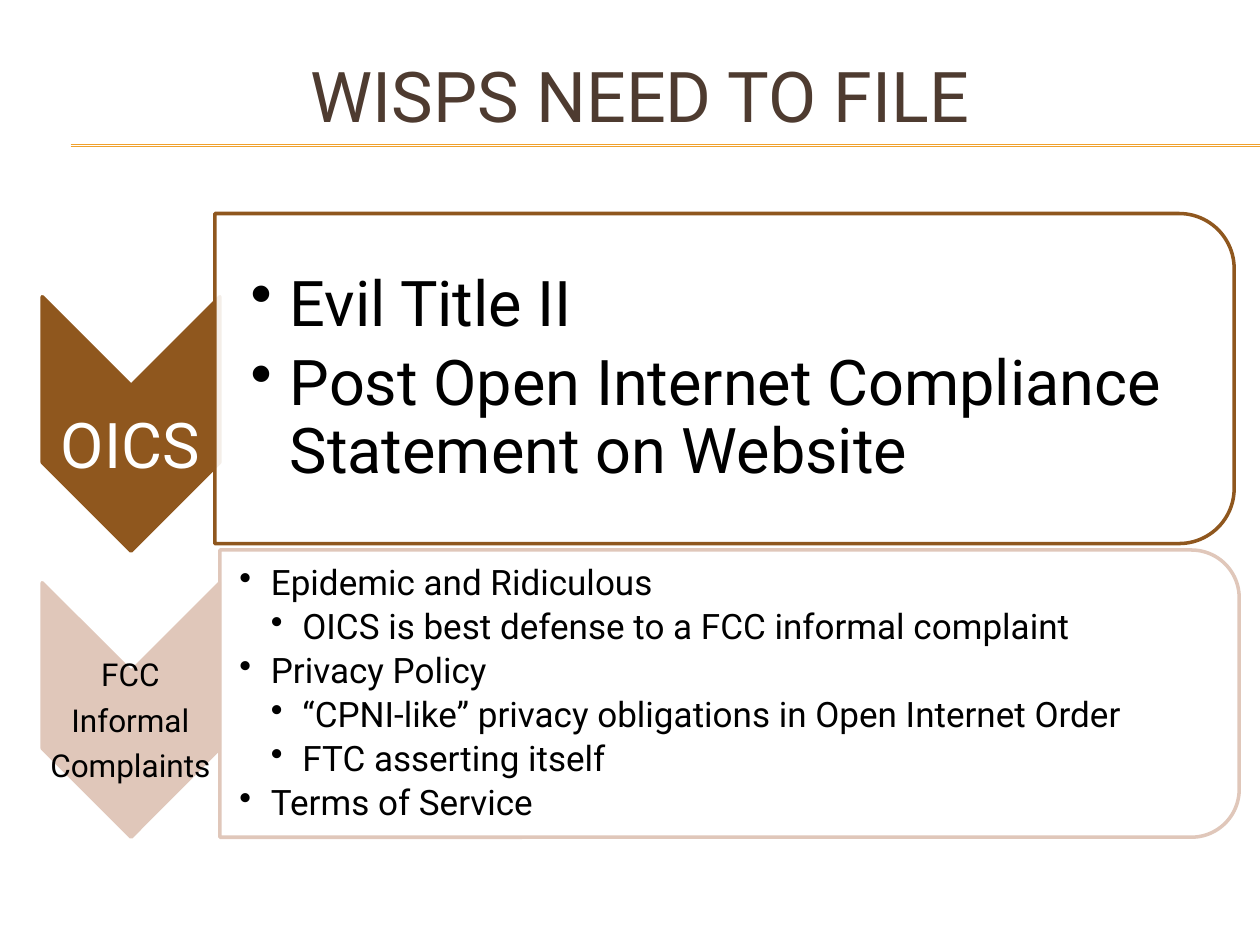
from dataclasses import dataclass
from typing import NamedTuple

from lxml.etree import SubElement
from pptx import Presentation
from pptx.dml.color import RGBColor
from pptx.enum.shapes import MSO_CONNECTOR, MSO_SHAPE
from pptx.enum.text import MSO_ANCHOR, PP_ALIGN
from pptx.oxml.ns import qn
from pptx.util import Inches, Pt

WIDTH, HEIGHT = 10, 7.5
FONT = "Roboto"
BROWN, ROSE, GOLD, TITLE = "8F571E", "E0C7BA", "F0A22E", "4E3B30"
BLACK, WHITE = "000000", "FFFFFF"


class Box(NamedTuple):
    """Left, top, width and height in percent of the slide."""
    x: float
    y: float
    w: float
    h: float


class Line(NamedTuple):
    text: str
    level: int = 0  # 0 is plain text, 1 and up are bulleted


@dataclass
class Style:
    size: float
    color: str
    spacing: float = 1.0
    after: float = 0
    indent: float = 0
    inset: float = 0.01
    left: float = 0.01


@dataclass
class Row:
    color: str
    chevron: Box
    label_box: Box
    label: list[Line]
    label_style: Style
    panel: Box
    list_box: Box
    items: list[Line]
    list_style: Style


ROWS = [
    Row(BROWN, Box(3.35, 31.4, 14.1, 26.93),
        Box(3.3, 42.93, 14.1, 8), [Line("OICS")], Style(36, WHITE),
        Box(17.05, 22.6, 80.9, 34.93), Box(17.1, 24.4, 79.6, 31.47),
        [Line("Evil Title II", 1),
         Line("Post Open Internet Compliance Statement on Website", 1)],
        Style(36, BLACK, 0.9, 6.3, 0.31, 0.03, 0.28)),
    Row(ROSE, Box(3.35, 61.67, 14.1, 26.93),
        Box(3.3, 72.4, 14.1, 8),
        [Line("FCC"), Line("Informal"), Line("Complaints")],
        Style(18, BLACK, 0.9, 6.7),
        Box(17.45, 58.2, 80.9, 30.4), Box(17.4, 59.73, 79.8, 27.47),
        [Line("Epidemic and Ridiculous", 1),
         Line("OICS is best defense to a FCC informal complaint", 2),
         Line("Privacy Policy", 1),
         Line("“CPNI-like” privacy obligations in Open Internet Order", 2),
         Line("FTC asserting itself", 2),
         Line("Terms of Service", 1)],
        Style(20, BLACK, 0.9, 3.5, 0.25, 0.01, 0.16)),
]


def rgb(color: str) -> RGBColor:
    return RGBColor.from_string(color)


def px(share: float) -> int:
    return Inches(WIDTH * share / 100)


def py(share: float) -> int:
    return Inches(HEIGHT * share / 100)


def add_rule(s, y: float) -> None:
    cn = s.shapes.add_connector(MSO_CONNECTOR.STRAIGHT,
                                px(5.6), py(y), px(100), py(y))
    cn.line.color.rgb = rgb(GOLD)
    cn.line.width = Pt(0.75)
    SubElement(cn._element.spPr, qn("a:effectLst"))


def add_turned(s, kind: MSO_SHAPE, box: Box, fill: str, line: str,
               opacity: int = 100) -> None:
    """Draw a shape turned a quarter so that it covers box."""
    x, y, w, h = px(box.x), py(box.y), px(box.w), py(box.h)
    sp = s.shapes.add_shape(kind, x + (w - h) // 2, y + (h - w) // 2, h, w)
    sp.rotation = 90
    sp.shadow.inherit = False
    sp.fill.solid()
    sp.fill.fore_color.rgb = rgb(fill)
    sp.line.color.rgb = rgb(line)
    sp.line.width = Pt(2)
    if opacity < 100:
        clr = sp._element.spPr.find(qn("a:solidFill"))[0]
        SubElement(clr, qn("a:alpha"), val=str(opacity * 1000))


def add_text(s, box: Box, lines: list[Line], style: Style) -> None:
    sp = s.shapes.add_textbox(px(box.x), py(box.y), px(box.w), py(box.h))
    tf = sp.text_frame
    tf.word_wrap = True
    tf.vertical_anchor = MSO_ANCHOR.MIDDLE
    tf.margin_left = Inches(style.left)
    tf.margin_top = tf.margin_right = tf.margin_bottom = Inches(style.inset)
    for i, line in enumerate(lines):
        p = tf.add_paragraph() if i else tf.paragraphs[0]
        p.line_spacing = style.spacing
        p.space_after = Pt(style.after)
        if line.level:
            p.level = line.level - 1
            pPr = p._p.get_or_add_pPr()
            pPr.set("marL", str(Inches(style.indent * line.level)))
            pPr.set("indent", str(-Inches(style.indent)))
            SubElement(pPr, qn("a:buChar"), char="•")
        else:
            p.alignment = PP_ALIGN.CENTER
        r = p.add_run()
        r.text = line.text
        r.font.name = FONT
        r.font.size = Pt(style.size)
        r.font.color.rgb = rgb(style.color)


def main() -> None:
    prs = Presentation()
    prs.slide_width, prs.slide_height = Inches(WIDTH), Inches(HEIGHT)
    s = prs.slides.add_slide(prs.slide_layouts[6])

    # Title and double rule
    for y in (15.33, 15.47):
        add_rule(s, y)
    add_text(s, Box(3.3, 2.75, 95, 14.4), [Line("WISPS NEED TO FILE")],
             Style(40, TITLE))

    # Chevron with its panel, row by row
    for row in ROWS:
        add_turned(s, MSO_SHAPE.CHEVRON, row.chevron, row.color, row.color)
        add_text(s, row.label_box, row.label, row.label_style)
        add_turned(s, MSO_SHAPE.ROUND_2_SAME_RECTANGLE, row.panel, WHITE,
                   row.color, opacity=90)
        add_text(s, row.list_box, row.items, row.list_style)

    prs.save("out.pptx")


if __name__ == "__main__":
    main()
